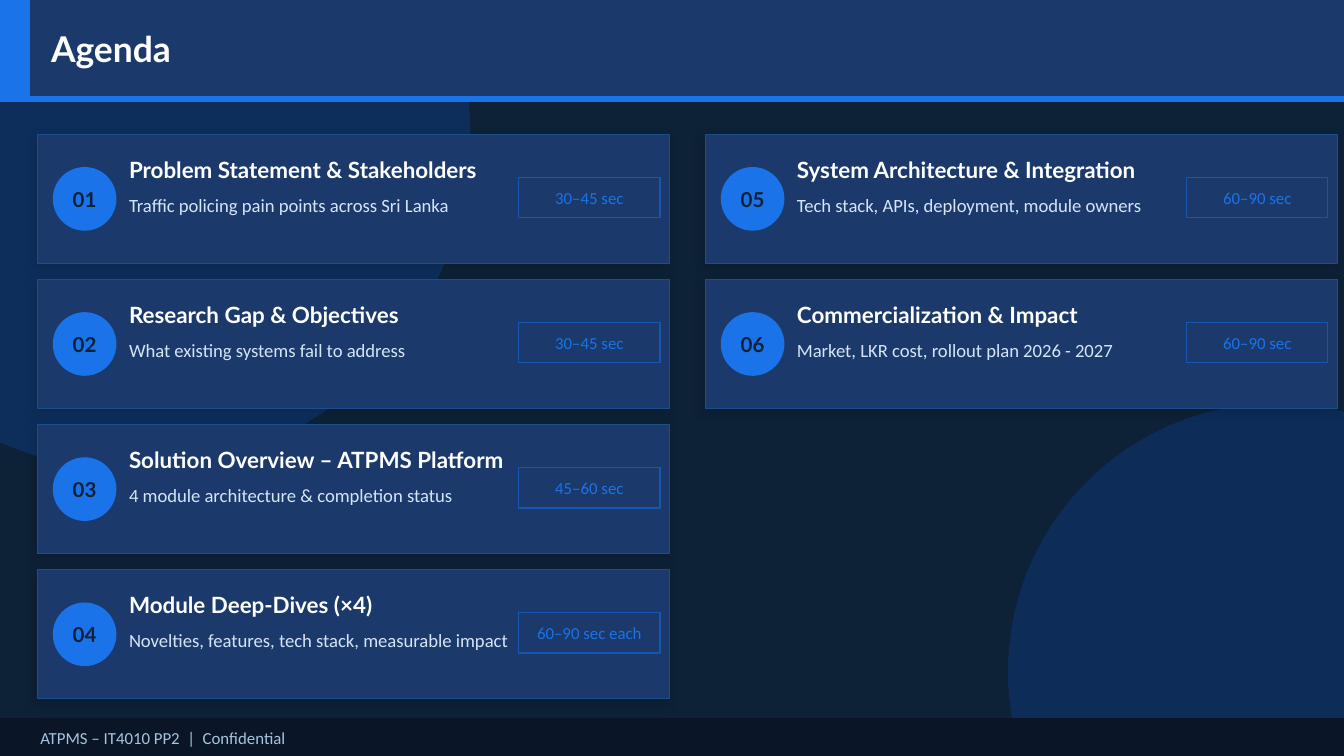
from pptx import Presentation
from pptx.dml.color import RGBColor
from pptx.enum.shapes import MSO_SHAPE
from pptx.enum.text import MSO_ANCHOR, PP_ALIGN
from pptx.oxml.ns import qn
from pptx.util import Emu, Pt
from lxml.etree import SubElement

TITLE = "Agenda"
FOOTER = "ATPMS – IT4010 PP2  |  Confidential"
ITEMS = [
    ("Problem Statement & Stakeholders",
     "Traffic policing pain points across Sri Lanka", "30–45 sec"),
    ("Research Gap & Objectives",
     "What existing systems fail to address", "30–45 sec"),
    ("Solution Overview – ATPMS Platform",
     "4 module architecture & completion status", "45–60 sec"),
    ("Module Deep-Dives (×4)",
     "Novelties, features, tech stack, measurable impact", "60–90 sec each"),
    ("System Architecture & Integration",
     "Tech stack, APIs, deployment, module owners", "60–90 sec"),
    ("Commercialization & Impact",
     "Market, LKR cost, rollout plan 2026 - 2027", "60–90 sec"),
]

# 100 px to the inch
PX = 9144
WIDTH = 1000
ROWS = 4
LEFT, TOP = 28, 100
STEP_X, STEP_Y = 497, 108

NAVY, PANEL, BLUE, GLOW = "0D2137", "1B3A6B", "1A73E8", "0D47A1"
WHITE = "FFFFFF"
HEAD, BODY = "Lato", "Calibri"


def rgb(code):
    return RGBColor.from_string(code)


def place(shape, *box):
    shape.left, shape.top, shape.width, shape.height = (
        Emu(n * PX) for n in box)


def write(shape, text, size=10, font=BODY, color=WHITE, bold=False,
          align=PP_ALIGN.LEFT, anchor=MSO_ANCHOR.MIDDLE):
    frame = shape.text_frame
    frame.word_wrap = True
    frame.vertical_anchor = anchor
    frame.margin_left = frame.margin_right = 0
    frame.margin_top = frame.margin_bottom = 0
    para = frame.paragraphs[0]
    para.alignment = align
    run = para.add_run()
    run.text = text
    run.font.size = Pt(size)
    run.font.name = font
    run.font.bold = bold
    run.font.color.rgb = rgb(color)


def draw(kind, box, fill, line=None, weight=1, alpha=None):
    shape = slide.shapes.add_shape(kind, *(Emu(n * PX) for n in box))
    shape.shadow.inherit = False
    shape.fill.solid()
    shape.fill.fore_color.rgb = rgb(fill)
    if line:
        shape.line.color.rgb = rgb(line)
        shape.line.width = Pt(weight)
    else:
        shape.line.fill.background()
    if alpha:
        color = shape.element.spPr.find(qn("a:solidFill"))[0]
        SubElement(color, qn("a:alpha"), val=str(alpha * 1000))
    return shape


def label(box, text, **style):
    shape = slide.shapes.add_textbox(*(Emu(n * PX) for n in box))
    write(shape, text, **style)


def shade(shape):
    """Add a soft shadow towards the lower left."""
    effects = shape.element.spPr.find(qn("a:effectLst"))
    outer = SubElement(effects, qn("a:outerShdw"), blurRad=str(Pt(6)),
                       dist=str(Pt(2)), dir=str(135 * 60000),
                       algn="bl", rotWithShape="0")
    color = SubElement(outer, qn("a:srgbClr"), val="000000")
    SubElement(color, qn("a:alpha"), val="12000")


def card(x, y, number, topic, detail, time):
    shade(draw(RECT, (x, y, 470, 96), PANEL, "1B4F8A", 0.5))
    badge = draw(OVAL, (x + 12, y + 25, 46, 46), BLUE, BLUE)
    write(badge, f"{number:02}", size=11, font=HEAD, color=NAVY, bold=True,
          align=PP_ALIGN.CENTER)
    label((x + 68, y + 7, 315, 38), topic, size=12, font=HEAD, bold=True)
    label((x + 68, y + 44, 315, 40), detail, color="D6E4F7",
          anchor=MSO_ANCHOR.TOP)
    pill = draw(RECT, (x + 358, y + 32, 105, 30), PANEL, "1557B0", 0.75)
    write(pill, time, size=9, color=BLUE, align=PP_ALIGN.CENTER)


RECT, OVAL = MSO_SHAPE.RECTANGLE, MSO_SHAPE.OVAL

deck = Presentation()
deck.slide_width = Emu(WIDTH * PX)
deck.slide_height = Emu(WIDTH * PX * 9 // 16)
slide = deck.slides.add_slide(deck.slide_layouts[5])
slide.background.fill.solid()
slide.background.fill.fore_color.rgb = rgb(NAVY)

draw(OVAL, (-150, -150, 500, 500), GLOW, alpha=35)
draw(OVAL, (750, 300, 400, 400), GLOW, alpha=30)

draw(RECT, (0, 0, WIDTH, 72), PANEL, PANEL)
draw(RECT, (0, 0, 22, 72), BLUE, BLUE)
title = slide.shapes.title
place(title, 38, 20, 930, 32)
write(title, TITLE, size=19, font=HEAD, bold=True)
title.element.getparent().append(title.element)  # in front of the header bar
draw(RECT, (0, 72, WIDTH, 3), BLUE, BLUE)

for i, item in enumerate(ITEMS):
    col, row = divmod(i, ROWS)
    card(LEFT + col * STEP_X, TOP + row * STEP_Y, i + 1, *item)

draw(RECT, (0, 535, WIDTH, 28), "0A1628", "0A1628")
label((30, 535, 940, 28), FOOTER, size=9, color="A8C4E0")

deck.save("out.pptx")
